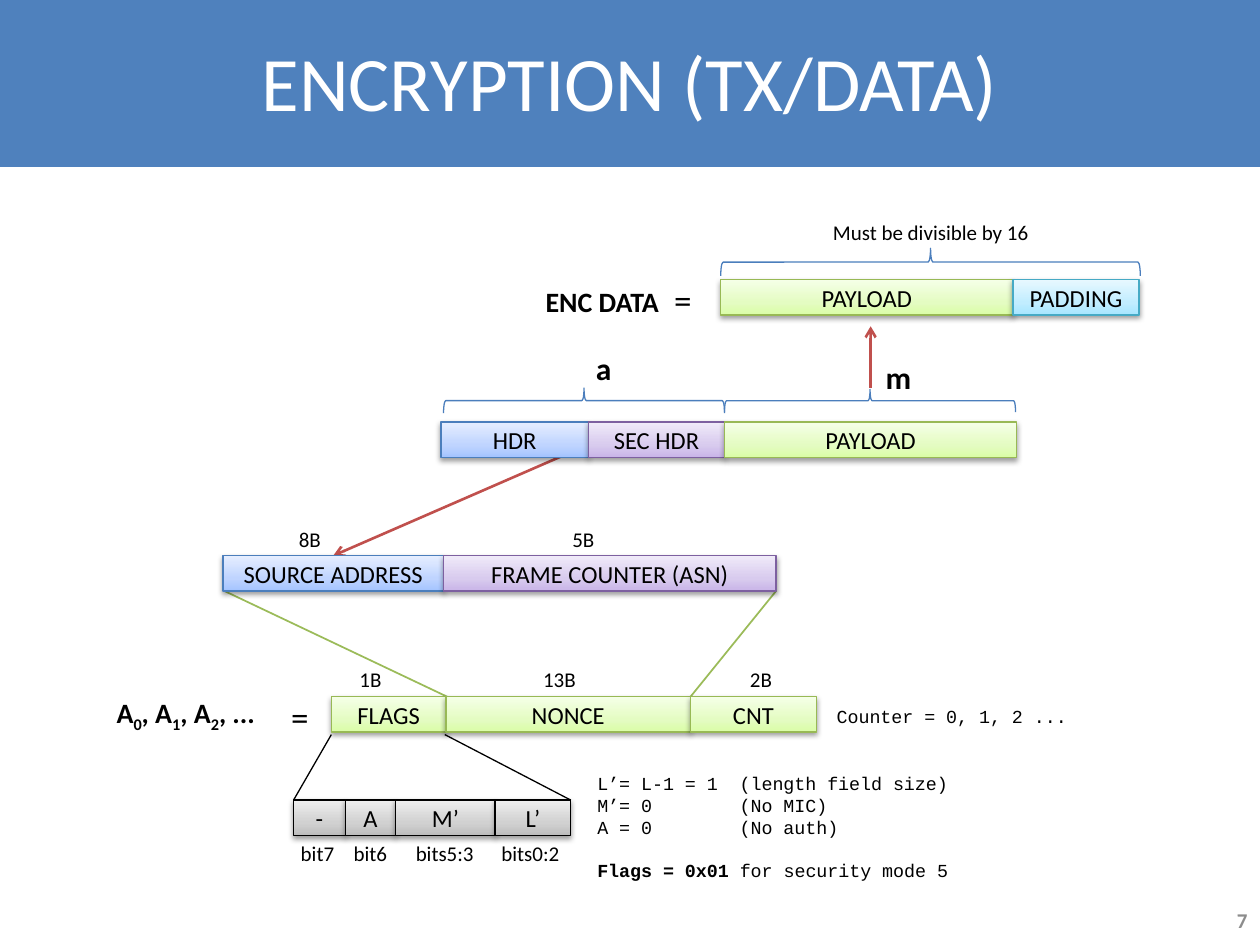
from copy import deepcopy

from lxml import etree
from pptx import Presentation
from pptx.dml.color import RGBColor
from pptx.enum import shapes, text
from pptx.oxml.ns import qn
from pptx.util import Inches, Pt

CELL_H = 0.28
MONO = {"name": "Courier New", "size": 10.5}
BOLD16 = {"size": 16, "bold": True}
BOLD18 = {"size": 18, "bold": True}
LEFT, CENTER, RIGHT = text.PP_ALIGN.LEFT, text.PP_ALIGN.CENTER, text.PP_ALIGN.RIGHT

# Colour scheme: line, then gradient from bottom to top
SCHEMES = {
    "green": ("98B955", "DAFDA7", "E4FCC2", "F5FFE7"),
    "cyan": ("46AAC5", "A7E6FF", "C1EDFF", "E7F8FF"),
    "blue": ("4B7EBC", "A4C4FF", "BFD4FF", "E6EEFF"),
    "purple": ("7D60A0", "C9B5E8", "D8CBEE", "F0EAF9"),
    "gray": ("000000", "BDBDBD", "D1D1D1", "EEEEEE"),
}
# Row of fields: left, top, then (label, width, scheme)
ROWS = [
    (5.72, 2.22, [("PAYLOAD", 2.32, "green"), ("PADDING", 1, "cyan")]),
    (3.5, 3.35, [("HDR", 1.17, "blue"), ("SEC HDR", 1.08, "purple"),
                 ("PAYLOAD", 2.32, "green")]),
    (1.77, 4.41, [("SOURCE ADDRESS", 1.75, "blue"),
                  ("FRAME COUNTER (ASN)", 2.64, "purple")]),
    (2.63, 5.53, [("FLAGS", 0.91, "green"), ("NONCE", 1.94, "green"),
                  ("CNT", 1, "green")]),
    (2.33, 6.35, [("-", 0.41, "gray"), ("A", 0.4, "gray"),
                  ("M’", 0.79, "gray"), ("L’", 0.6, "gray")]),
]
# Size labels: top, then (label, centre)
SIZES = [
    (4.14, [("8B", 2.46), ("5B", 4.63)]),
    (5.25, [("1B", 2.94), ("13B", 4.44), ("2B", 6.04)]),
    (6.63, [("bit7", 2.52), ("bit6", 2.94), ("bits5:3", 3.53), ("bits0:2", 4.21)]),
]
# Upward braces: left, top, width, height
BRACES = [(5.72, 1.97, 3.33, 0.22), (3.52, 3.08, 2.23, 0.2), (5.75, 3.09, 2.31, 0.18)]
# Text: box, alignment, font, paragraphs of (text, font changes) runs
TEXTS = [
    ((6.57, 1.7, 1.68, 0.28), LEFT, {"size": 12}, [[("Must be divisible by 16", {})]]),
    ((4.29, 2.22, 1.17, 0.35), LEFT, BOLD16, [[("ENC DATA", {})]]),
    ((5.31, 2.17, 0.27, 0.42), LEFT, {"size": 20}, [[("=", {})]]),
    ((4.64, 2.73, 0.3, 0.38), CENTER, BOLD18, [[("a", {})]]),
    ((6.98, 2.8, 0.3, 0.38), CENTER, BOLD18, [[("m", {})]]),
    ((0.71, 5.48, 1.53, 0.35), CENTER, BOLD16,
     [[("A", {}), ("0", {"sub": True}), (", A", {}), ("1", {"sub": True}),
       (", A", {}), ("2", {"sub": True}), (", ...", {})]]),
    ((2.27, 5.48, 0.27, 0.42), LEFT, {"size": 20}, [[("=", {})]]),
    ((6.6, 5.56, 2.52, 0.26), LEFT, MONO, [[("Counter = 0, 1, 2 ...", {})]]),
]
NOTES = [
    [("L’= L-1 = 1\t(length field size)", {})],
    [("M’= 0\t(No MIC)", {})],
    [("A = 0\t(No auth)", {})],
    [("Flags = 0x01 ", {"bold": True}), ("for security mode 5", {})],
]
# Lines: from, to, colour, width
LINES = [
    ((2.63, 5.83), (2.33, 6.35), "000000", 0.75),
    ((3.53, 5.83), (4.53, 6.35), "000000", 0.75),
    ((1.78, 4.69), (3.55, 5.53), "9BBB59", 1),
    ((6.16, 4.69), (5.48, 5.53), "9BBB59", 1),
]


def rgb(value):
    return RGBColor.from_string(value)


def write(sp, paragraphs, align, font, inset=0.04, anchor=text.MSO_ANCHOR.TOP):
    tf = sp.text_frame
    tf.word_wrap, tf.vertical_anchor = True, anchor
    for side in ("left", "top", "right", "bottom"):
        setattr(tf, f"margin_{side}", Inches(inset))
    for i, runs in enumerate(paragraphs):
        p = tf.add_paragraph() if i else tf.paragraphs[0]
        p.alignment = align
        for words, changes in runs:
            r = p.add_run()
            r.text = words
            fmt = {"name": "Calibri", "size": 14, "color": "000000", **font, **changes}
            r.font.color.rgb = rgb(fmt.pop("color"))
            if fmt.pop("sub", False):
                r.font._element.set("baseline", "-25000")
            fmt["size"] = Pt(fmt["size"])
            for key, value in fmt.items():
                setattr(r.font, key, value)
    return tf


def add_text(s, box, *args, **kwargs):
    return write(s.shapes.add_textbox(*map(Inches, box)), *args, **kwargs)


def add_plain(s, kind, box, line, width):
    sp = s.shapes.add_shape(kind, *map(Inches, box))
    sp.shadow.inherit = False
    sp.line.color.rgb, sp.line.width = rgb(line), Pt(width)
    return sp


def add_cell(s, box, label, scheme):
    """Field box with a three-stop gradient and a soft drop shadow."""
    line, *colors = SCHEMES[scheme]
    sp = add_plain(s, shapes.MSO_SHAPE.RECTANGLE, box, line, 0.75)
    sp.fill.gradient()
    sp.fill.gradient_angle = 90
    stops = sp._element.spPr.find(".//" + qn("a:gsLst"))
    stops.insert(1, deepcopy(stops[0]))
    for stop, color, position in zip(sp.fill.gradient_stops, colors, (0, 0.35, 1)):
        stop.color.rgb, stop.position = rgb(color), position
    effects = sp._element.spPr.find(qn("a:effectLst"))
    shadow = etree.SubElement(effects, qn("a:outerShdw"), blurRad="39370",
                              dist="20320", dir="5400000", rotWithShape="0")
    black = etree.SubElement(shadow, qn("a:srgbClr"), val="000000")
    etree.SubElement(black, qn("a:alpha"), val="38000")
    write(sp, [[(label, {})]], CENTER, {}, anchor=text.MSO_ANCHOR.MIDDLE)
    return sp


def add_line(s, start, end, color, width, arrow=False):
    c = s.shapes.add_connector(shapes.MSO_CONNECTOR.STRAIGHT,
                               *map(Inches, (*start, *end)))
    c.line.color.rgb, c.line.width = rgb(color), Pt(width)
    if arrow:
        etree.SubElement(c.line._get_or_add_ln(), qn("a:tailEnd"), type="arrow")
    etree.SubElement(c._element.spPr, qn("a:effectLst"))
    return c


def add_brace(s, left, top, width, height):
    """Left brace turned a quarter so that its tip points up."""
    box = (left + (width - height) / 2, top + (height - width) / 2, height, width)
    sp = add_plain(s, shapes.MSO_SHAPE.LEFT_BRACE, box, "4B7EBC", 0.75)
    sp.fill.background()
    sp.rotation = 90


def main():
    prs = Presentation()
    prs.slide_width, prs.slide_height = Inches(10), Inches(7.5)
    s = prs.slides.add_slide(prs.slide_layouts[6])

    banner = add_plain(s, shapes.MSO_SHAPE.RECTANGLE, (0, 0, 10, 1.31), "4F81BD", 2)
    banner.fill.solid()
    banner.fill.fore_color.rgb = rgb("4F81BD")
    add_text(s, (0.12, 0.05, 9.76, 1.18), [[("ENCRYPTION (TX/DATA)", {})]], CENTER,
             {"size": 44, "color": "FFFFFF"}, anchor=text.MSO_ANCHOR.MIDDLE)

    add_line(s, (6.91, 3.08), (6.91, 2.59), "C0504D", 1.5, arrow=True)
    header_link = add_line(s, (4.46, 3.62), (2.64, 4.41), "C0504D", 1.5, arrow=True)
    for line in LINES:
        add_line(s, *line)
    for brace in BRACES:
        add_brace(s, *brace)

    cells = {}
    for left, top, fields in ROWS:
        for label, width, scheme in fields:
            cells[label] = add_cell(s, (left, top, width, CELL_H), label, scheme)
            left += width
    header_link.end_connect(cells["SOURCE ADDRESS"], 0)

    for top, labels in SIZES:
        for label, center in labels:
            add_text(s, (center - 0.4, top, 0.8, CELL_H), [[(label, {})]], CENTER,
                     {"size": 12})
    for box, align, font, paragraphs in TEXTS:
        add_text(s, box, paragraphs, align, font)

    notes = add_text(s, (4.7, 6.09, 2.91, 0.99), NOTES, LEFT, MONO)
    for p in notes.paragraphs[:3]:
        tabs = etree.SubElement(p._p.get_or_add_pPr(), qn("a:tabLst"))
        etree.SubElement(tabs, qn("a:tab"), pos=str(Inches(1.13)), algn="l")
    notes.paragraphs[3].space_before = Pt(12)

    add_text(s, (9.49, 7.1, 0.51, 0.4), [[("7", {})]], RIGHT,
             {"size": 12, "bold": True, "color": "8C8C8C"}, inset=0.1,
             anchor=text.MSO_ANCHOR.MIDDLE)
    prs.save("out.pptx")


if __name__ == "__main__":
    main()
